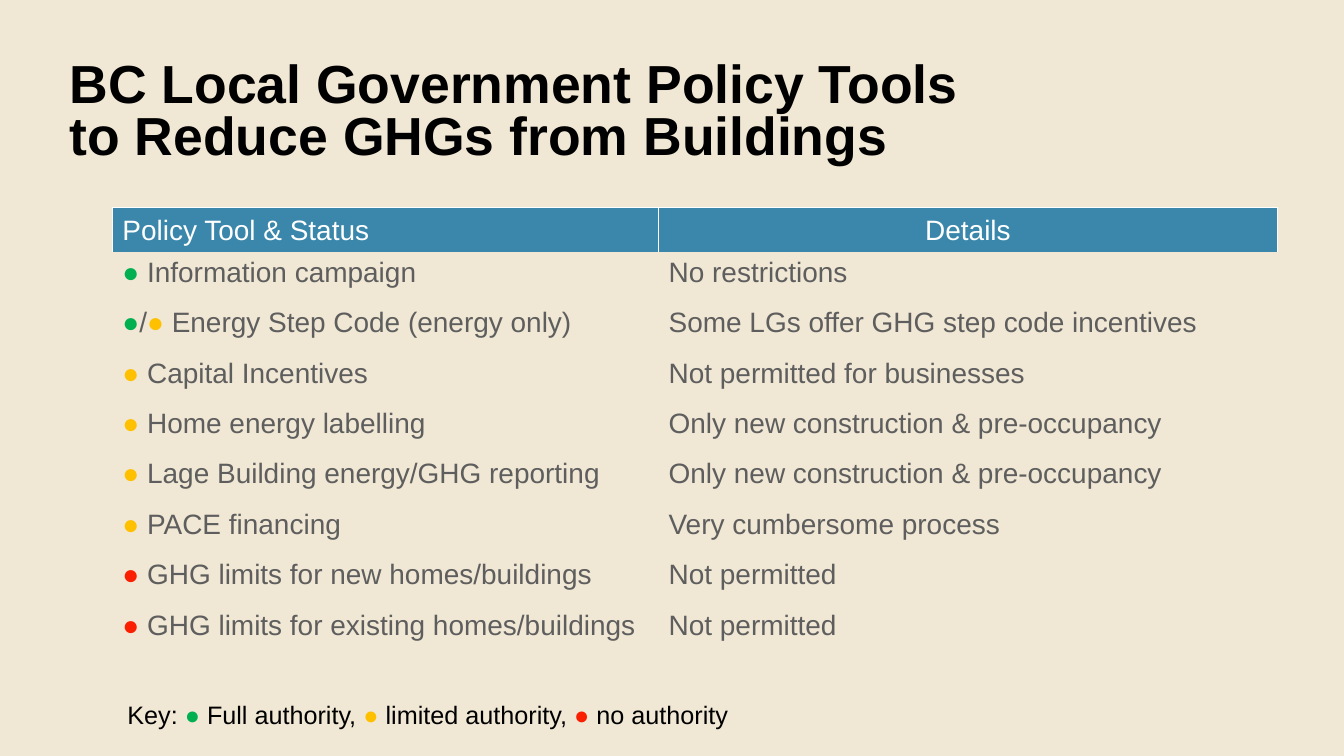
from lxml.etree import SubElement
from pptx import Presentation
from pptx.dml.color import RGBColor
from pptx.enum.text import MSO_ANCHOR, PP_ALIGN
from pptx.oxml.ns import qn
from pptx.util import Inches, Pt

COLOURS = {
    "background": "F0E7D4", "header": "3A87AB", "white": "FFFFFF",
    "black": "000000", "body": "5E5E5E",
    "full": "00B050", "limited": "FFC000", "none": "FA1F00",
}
NO_GRID_STYLE = "{2D5ABB26-0587-4C30-8999-92F81FD0307C}"
DOT = "●"


def colour(name):
    return RGBColor.from_string(COLOURS[name])


class PolicySlide:
    font = "Arial"

    def __init__(self, deck):
        self.width, self.height = deck.slide_width, deck.slide_height
        self.page = deck.slides.add_slide(deck.slide_layouts[5])
        self.page.background.fill.solid()
        self.page.background.fill.fore_color.rgb = colour("background")

    def across(self, percent):
        return round(self.width * percent / 100)

    def down(self, percent):
        return round(self.height * percent / 100)

    def area(self, left, top, width, height):
        return self.across(left), self.down(top), self.across(width), self.down(height)

    def style_span(self, span, size, name, bold=False):
        span.font.name = self.font
        span.font.size = Pt(size)
        span.font.bold = bold
        span.font.color.rgb = colour(name)

    def add_spans(self, para, spans, size):
        for text, name in spans:
            span = para.add_run()
            span.text = text
            self.style_span(span, size, name)

    def title(self, text, place):
        box = self.page.shapes.title
        box.left, box.top, box.width, box.height = self.area(*place)
        frame = box.text_frame
        frame.text = text
        frame.word_wrap = True
        frame.vertical_anchor = MSO_ANCHOR.TOP
        frame.margin_left = frame.margin_right = Inches(0.06)
        frame.margin_top = frame.margin_bottom = Inches(0.06)
        para = frame.paragraphs[0]
        para.alignment = PP_ALIGN.LEFT
        para.line_spacing = 0.8
        for span in para.runs:
            self.style_span(span, 76.5, "black", bold=True)

    def text(self, spans, place, size):
        frame = self.page.shapes.add_textbox(*self.area(*place)).text_frame
        frame.word_wrap = True
        self.add_spans(frame.paragraphs[0], spans, size)

    def border(self, cell, sides):
        properties = cell._tc.get_or_add_tcPr()
        for position, side in enumerate(sides):
            line = SubElement(properties, qn(f"a:ln{side}"), w=str(Pt(1)))
            fill = SubElement(line, qn("a:solidFill"))
            SubElement(fill, qn("a:srgbClr"), val=COLOURS["white"])
            properties.insert(position, line)

    def cell(self, cell, spans, is_header, size):
        cell.margin_left = cell.margin_right = Inches(0.2)
        cell.margin_top = cell.margin_bottom = Inches(0.1)
        cell.vertical_anchor = MSO_ANCHOR.BOTTOM if is_header else MSO_ANCHOR.TOP
        if is_header:
            cell.fill.solid()
            cell.fill.fore_color.rgb = colour("header")
            self.border(cell, "LRT")
        else:
            cell.fill.background()
        self.add_spans(cell.text_frame.paragraphs[0], spans, size)

    def table(self, rows, place, columns, heights, size):
        shape = self.page.shapes.add_table(len(rows), len(columns), *self.area(*place))
        table = shape.table
        table.horz_banding = False
        table._tbl.tblPr.find(qn("a:tableStyleId")).text = NO_GRID_STYLE
        for column, width in zip(table.columns, columns):
            column.width = self.across(width)
        for row, height in zip(table.rows, heights):
            row.height = self.down(height)
        for r, row in enumerate(rows):
            for c, spans in enumerate(row):
                self.cell(table.cell(r, c), spans, r == 0, size)
        table.cell(0, 1).text_frame.paragraphs[0].alignment = PP_ALIGN.CENTER


POLICIES = [
    (["full"], "Information campaign", "No restrictions"),
    (["full", "limited"], "Energy Step Code (energy only)",
     "Some LGs offer GHG step code incentives"),
    (["limited"], "Capital Incentives", "Not permitted for businesses"),
    (["limited"], "Home energy labelling", "Only new construction & pre-occupancy"),
    (["limited"], "Lage Building energy/GHG reporting",
     "Only new construction & pre-occupancy"),
    (["limited"], "PACE financing", "Very cumbersome process"),
    (["none"], "GHG limits for new homes/buildings", "Not permitted"),
    (["none"], "GHG limits for existing homes/buildings", "Not permitted"),
]
KEY = [("full", "Full authority, "), ("limited", "limited authority, "),
       ("none", "no authority")]


def policy_row(statuses, tool, details):
    spans = []
    for status in statuses[:-1]:
        spans += [(DOT, status), ("/", "body")]
    spans += [(f"{DOT} ", statuses[-1]), (tool, "body")]
    return spans, [(details, "body")]


def main():
    deck = Presentation()
    deck.slide_width, deck.slide_height = Inches(26.67), Inches(15)
    slide = PolicySlide(deck)
    slide.title("BC Local Government Policy Tools \vto Reduce GHGs from Buildings",
                (4.95, 7.87, 90.1, 10.47))

    header = [[("Policy Tool & Status", "white")], [("Details", "white")]]
    rows = [header] + [policy_row(*policy) for policy in POLICIES]
    heights = [5.93] + [6.67] * len(POLICIES)
    slide.table(rows, (8.36, 27.4, 86.68, sum(heights)), (40.64, 46.04), heights, 40)

    key = [("Key: ", "black")]
    for status, meaning in KEY:
        key += [(f"{DOT} ", status), (meaning, "black")]
    slide.text(key, (9.11, 92.13, 85.15, 4.73), 36)
    deck.save("out.pptx")


if __name__ == "__main__":
    main()
